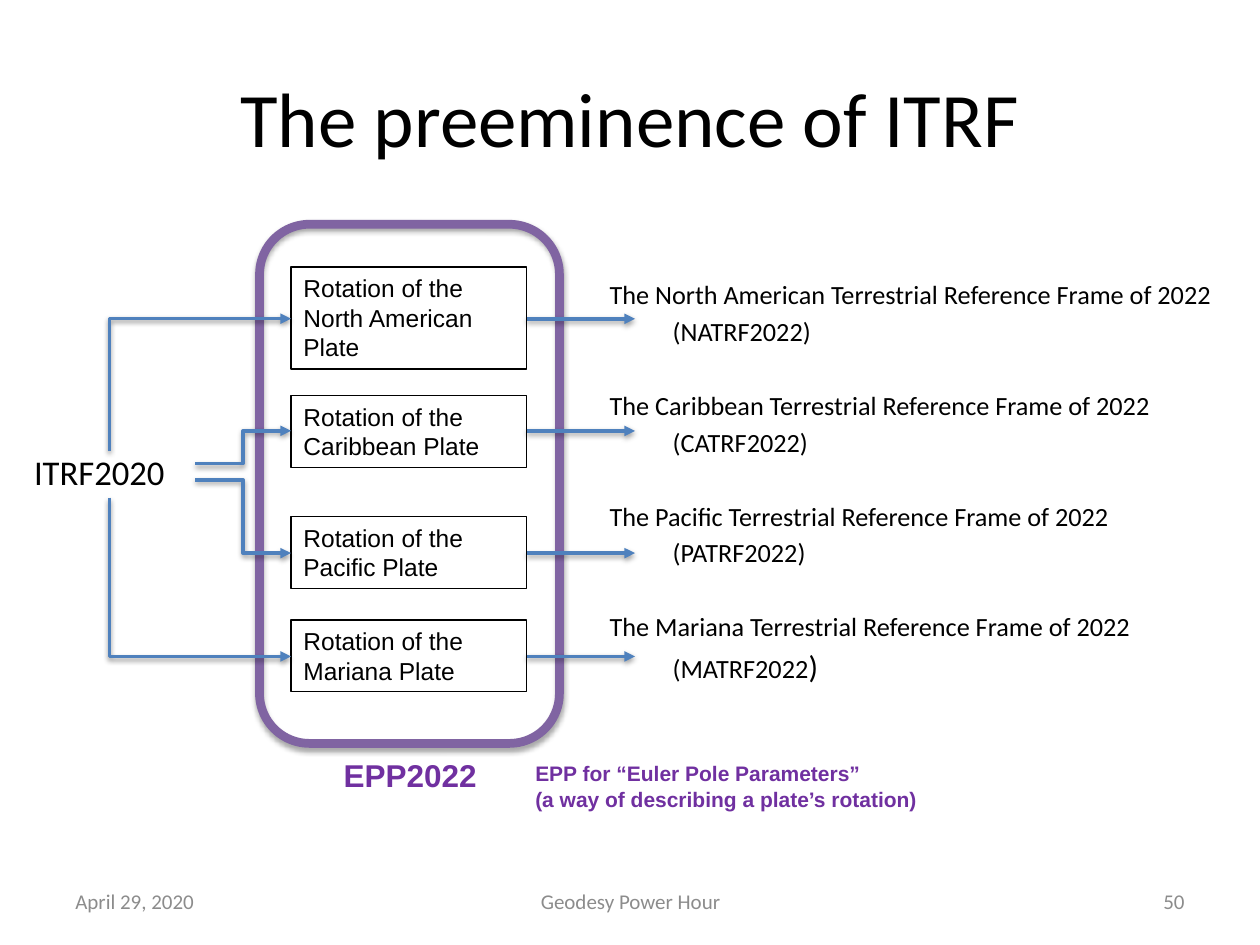
from dataclasses import dataclass

from lxml.etree import SubElement
from pptx import Presentation
from pptx.dml.color import RGBColor
from pptx.enum.shapes import MSO_CONNECTOR as Connector, MSO_SHAPE as Shape
from pptx.enum.text import MSO_ANCHOR as Anchor, MSO_AUTO_SIZE as AutoSize, PP_ALIGN as Align
from pptx.oxml.ns import qn
from pptx.util import Inches, Pt


@dataclass(frozen=True)
class Theme:
    heading_font: str = "Calibri"
    label_font: str = "Arial"
    black: str = "000000"
    gray: str = "8C8C8C"
    blue: str = "4F81BD"
    frame: str = "8064A2"
    purple: str = "7030A0"
    title: float = 44
    source: float = 19.8
    group: float = 18
    body: float = 15
    plate: float = 14
    small: float = 12


THEME = Theme()
PLATES = [
    ("North American", "NATRF2022", 2.12, 0.81, 2.53),
    ("Caribbean", "CATRF2022", 3.14, 0.57, 3.42),
    ("Pacific", "PATRF2022", 4.10, 0.57, 4.39),
    ("Mariana", "MATRF2022", 4.92, 0.57, 5.21),
]
PLATE_LEFT, PLATE_WIDTH = 2.31, 1.87
PLATE_RIGHT = PLATE_LEFT + PLATE_WIDTH
ARROW_END = 5.04
SOURCE_CENTER, SOURCE_RIGHT = 0.87, 1.55


def format_run(run, font=THEME.heading_font, size=THEME.body, color=THEME.black, bold=False):
    run.font.name = font
    run.font.size = Pt(size)
    run.font.bold = bold
    run.font.color.rgb = RGBColor.from_string(color)


def write_text(shape, lines, align=Align.LEFT, anchor=Anchor.TOP, wrap=True,
               grow=False, margins=True, **run_format):
    frame = shape.text_frame
    frame.word_wrap = wrap
    frame.vertical_anchor = anchor
    frame.auto_size = AutoSize.SHAPE_TO_FIT_TEXT if grow else AutoSize.NONE
    if not margins:
        frame.margin_left = frame.margin_right = frame.margin_top = frame.margin_bottom = 0
    for index, line in enumerate(lines):
        paragraph = frame.add_paragraph() if index else frame.paragraphs[0]
        paragraph.alignment = align
        run = paragraph.add_run()
        run.text = line
        format_run(run, **run_format)
    return frame


def add_text(slide, box, lines, **text_format):
    shape = slide.shapes.add_textbox(*map(Inches, box))
    return write_text(shape, lines, **text_format)


def add_outline(slide, kind, box, color, width):
    shape = slide.shapes.add_shape(kind, *map(Inches, box))
    shape.shadow.inherit = False
    shape.fill.background()
    shape.line.color.rgb = RGBColor.from_string(color)
    shape.line.width = Pt(width)
    return shape


def add_shadow(shape, opacity, distance):
    properties = shape.element.spPr
    effects = properties.find(qn("a:effectLst"))
    if effects is None:
        effects = SubElement(properties, qn("a:effectLst"))
    shadow = SubElement(effects, qn("a:outerShdw"), blurRad=str(Pt(3.1)),
                        dist=str(Pt(distance)), dir="5400000", rotWithShape="0")
    color = SubElement(shadow, qn("a:srgbClr"), val=THEME.black)
    SubElement(color, qn("a:alpha"), val=str(opacity * 1000))


def add_arrow(slide, start, end, kind=Connector.STRAIGHT):
    arrow = slide.shapes.add_connector(kind, *map(Inches, (*start, *end)))
    arrow.line.color.rgb = RGBColor.from_string(THEME.blue)
    arrow.line.width = Pt(2)
    SubElement(arrow.line._get_or_add_ln(), qn("a:tailEnd"), type="triangle")
    add_shadow(arrow, 38, 1.6)
    return arrow


def add_corner_arrow(slide, start, end):
    center_x, center_y = (start[0] + end[0]) / 2, (start[1] + end[1]) / 2
    half_width = abs(end[1] - start[1]) / 2
    half_height = (end[0] - start[0]) / 2
    upward = end[1] < start[1]
    if not upward:
        half_height = -half_height
    arrow = add_arrow(slide, (center_x + half_width, center_y + half_height),
                      (center_x - half_width, center_y - half_height), Connector.ELBOW)
    properties = arrow.element.spPr
    properties.find(qn("a:prstGeom")).set("prst", "bentConnector2")
    properties.find(qn("a:xfrm")).set("rot", str((90 if upward else 270) * 60000))


def add_frames_list(slide):
    lines = []
    for name, code, *_ in PLATES:
        lines += [f"The {name} Terrestrial Reference Frame of 2022", f"\t({code}"]
    frame = add_text(slide, (4.74, 2.16, 5.19, 3.94), lines)
    for index, paragraph in enumerate(frame.paragraphs):
        if index:
            paragraph.space_before = Pt(3 if index % 2 else 24.3)
        if index % 2:
            closing = paragraph.add_run()
            closing.text = ")"
            last = index == len(lines) - 1
            format_run(closing, size=THEME.group if last else THEME.body)


def add_plates(slide):
    for name, _, top, height, _ in PLATES:
        box = (PLATE_LEFT, top, PLATE_WIDTH, height)
        shape = add_outline(slide, Shape.RECTANGLE, box, THEME.black, 0.75)
        write_text(shape, ["Rotation of the", f"{name} Plate"], grow=True,
                   font=THEME.label_font, size=THEME.plate)


def add_arrows(slide):
    north, caribbean, pacific, mariana = [plate[-1] for plate in PLATES]
    add_corner_arrow(slide, (SOURCE_CENTER, 3.58), (PLATE_LEFT, north))
    add_corner_arrow(slide, (SOURCE_CENTER, 3.95), (PLATE_LEFT, mariana))
    for start, end in [(3.68, caribbean), (3.81, pacific)]:
        add_arrow(slide, (SOURCE_RIGHT, start), (PLATE_LEFT, end), Connector.ELBOW)
    for middle in (north, caribbean, pacific, mariana):
        add_arrow(slide, (PLATE_RIGHT, middle), (ARROW_END, middle))


def add_footer(slide):
    for left, width, text, align in [
        (0.5, 2.33, "April 29, 2020", Align.LEFT),
        (3.42, 3.17, "Geodesy Power Hour", Align.CENTER),
        (7.17, 2.33, "50", Align.RIGHT),
    ]:
        add_text(slide, (left, 6.95, width, 0.4), [text], align=align,
                 anchor=Anchor.MIDDLE, size=THEME.small, color=THEME.gray)


def main():
    presentation = Presentation()
    presentation.slide_width, presentation.slide_height = Inches(10), Inches(7.5)
    slide = presentation.slides.add_slide(presentation.slide_layouts[6])
    add_text(slide, (0.5, 0.3, 9, 1.25), ["The preeminence of ITRF"],
             align=Align.CENTER, anchor=Anchor.MIDDLE, size=THEME.title)
    add_frames_list(slide)
    add_plates(slide)
    add_text(slide, (0.27, 3.58, 1.19, 0.36), ["ITRF2020"],
             wrap=False, margins=False, size=THEME.source)
    group = add_outline(slide, Shape.ROUNDED_RECTANGLE, (2.06, 1.78, 2.38, 4.12), THEME.frame, 5)
    add_shadow(group, 35, 1.8)
    purple_label = dict(wrap=False, grow=True, font=THEME.label_font,
                        color=THEME.purple, bold=True)
    add_text(slide, (2.63, 5.95, 1.27, 0.4), ["EPP2022"], size=THEME.group, **purple_label)
    add_arrows(slide)
    add_text(slide, (4.15, 5.99, 3.27, 0.5),
             ["EPP for “Euler Pole Parameters”", "(a way of describing a plate’s rotation)"],
             size=THEME.small, **purple_label)
    add_footer(slide)
    presentation.save("out.pptx")


if __name__ == "__main__":
    main()
